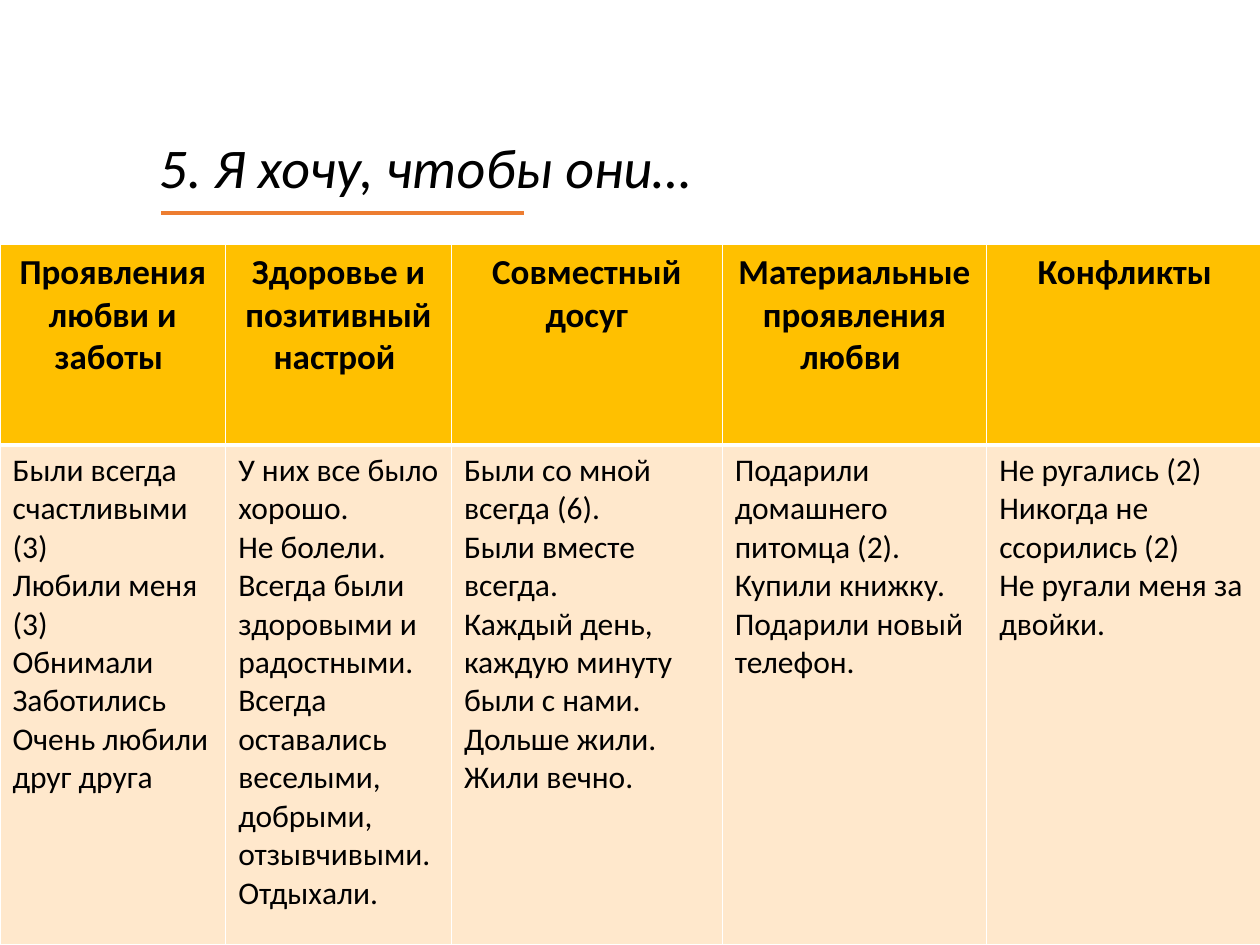
from dataclasses import dataclass

from lxml import etree
from pptx import Presentation
from pptx.dml.color import RGBColor
from pptx.enum.shapes import MSO_CONNECTOR
from pptx.enum.text import MSO_ANCHOR, PP_ALIGN
from pptx.oxml.ns import qn
from pptx.util import Cm, Pt

STRAIGHT = MSO_CONNECTOR.STRAIGHT
MIDDLE = MSO_ANCHOR.MIDDLE
LEFT = PP_ALIGN.LEFT
CENTER = PP_ALIGN.CENTER
TITLE_ONLY = 5


@dataclass(frozen=True)
class Theme:
    font: str = "Calibri"
    text: str = "000000"
    accent: str = "ED7D31"
    header: str = "FFC000"
    body: str = "FFE8CC"
    grid: str = "FFFFFF"
    title_size: int = 32
    header_size: int = 20
    body_size: int = 18


@dataclass(frozen=True)
class Box:
    left: float
    top: float
    width: float
    height: float


THEME = Theme()
COLUMN_WIDTHS = [4.55, 4.55, 5.46, 5.33, 5.57]
ROW_HEIGHTS = [4.04, 10.08]
WISHES = {
    "Проявления любви и заботы ": [
        "Были всегда счастливыми (3)",
        "Любили меня (3)",
        "Обнимали",
        "Заботились",
        "Очень любили друг друга",
    ],
    "Здоровье и позитивный настрой ": [
        "У них все было хорошо.",
        "Не болели.",
        "Всегда были здоровыми и радостными.",
        "Всегда оставались веселыми, добрыми, отзывчивыми.",
        "Отдыхали.",
    ],
    "Совместный досуг": [
        "Были со мной всегда (6).",
        "Были вместе всегда.",
        "Каждый день, каждую минуту были с нами.",
        "Дольше жили.",
        "Жили вечно.",
    ],
    "Материальные проявления любви ": [
        "Подарили домашнего питомца (2).",
        "Купили книжку.",
        "Подарили новый телефон.",
    ],
    "Конфликты": [
        "Не ругались (2)",
        "Никогда не ссорились (2)",
        "Не ругали меня за двойки.",
    ],
}


def write_text(frame, lines, size, align=LEFT, bold=False, italic=False, spacing=1.0):
    frame.word_wrap = True
    for index, line in enumerate(lines):
        para = frame.paragraphs[0] if index == 0 else frame.add_paragraph()
        para.alignment = align
        para.line_spacing = spacing
        span = para.add_run()
        span.text = line
        font = span.font
        font.name = THEME.font
        font.size = Pt(size)
        font.bold = bold
        font.italic = italic
        font.color.rgb = RGBColor.from_string(THEME.text)


def set_borders(cell, **widths):
    properties = cell._tc.get_or_add_tcPr()
    for side in "LRTB":
        line = etree.SubElement(properties, qn(f"a:ln{side}"), w=str(Pt(widths.get(side, 1))))
        fill = etree.SubElement(line, qn("a:solidFill"))
        etree.SubElement(fill, qn("a:srgbClr"), val=THEME.grid)


def fill_cell(cell, color, **borders):
    set_borders(cell, **borders)
    cell.fill.solid()
    cell.fill.fore_color.rgb = RGBColor.from_string(color)


def add_heading(page, box, text):
    title = page.shapes.title
    title.left, title.top = Cm(box.left), Cm(box.top)
    title.width, title.height = Cm(box.width), Cm(box.height)
    title.text_frame.vertical_anchor = MIDDLE
    write_text(title.text_frame, [text], THEME.title_size, italic=True, spacing=0.9)

    rule_left, rule_top = box.left + 0.3, box.top + 2.69
    rule = page.shapes.add_connector(
        STRAIGHT, Cm(rule_left), Cm(rule_top), Cm(rule_left + 7.32), Cm(rule_top)
    )
    rule.line.color.rgb = RGBColor.from_string(THEME.accent)
    rule.line.width = Pt(2)
    etree.SubElement(rule._element.spPr, qn("a:effectLst"))


def add_wishes_table(page, box, wishes):
    table = page.shapes.add_table(
        len(ROW_HEIGHTS), len(wishes),
        Cm(box.left), Cm(box.top), Cm(box.width), Cm(box.height),
    ).table
    for column, width in zip(table.columns, COLUMN_WIDTHS):
        column.width = Cm(width)
    for row, height in zip(table.rows, ROW_HEIGHTS):
        row.height = Cm(height)
    for index, (heading, lines) in enumerate(wishes.items()):
        header, body = table.cell(0, index), table.cell(1, index)
        fill_cell(header, THEME.header, B=3)
        write_text(header.text_frame, [heading], THEME.header_size, align=CENTER, bold=True)
        fill_cell(body, THEME.body, T=3)
        write_text(body.text_frame, lines, THEME.body_size)


def main():
    deck = Presentation()
    deck.slide_width, deck.slide_height = Cm(25.4), Cm(19.05)
    page = deck.slides.add_slide(deck.slide_layouts[TITLE_ONLY])
    add_heading(page, Box(2.95, 1.6, 19.96, 3.68), "5. Я хочу, чтобы они…")
    add_wishes_table(page, Box(0, 4.93, sum(COLUMN_WIDTHS), sum(ROW_HEIGHTS)), WISHES)
    deck.save("out.pptx")


if __name__ == "__main__":
    main()
